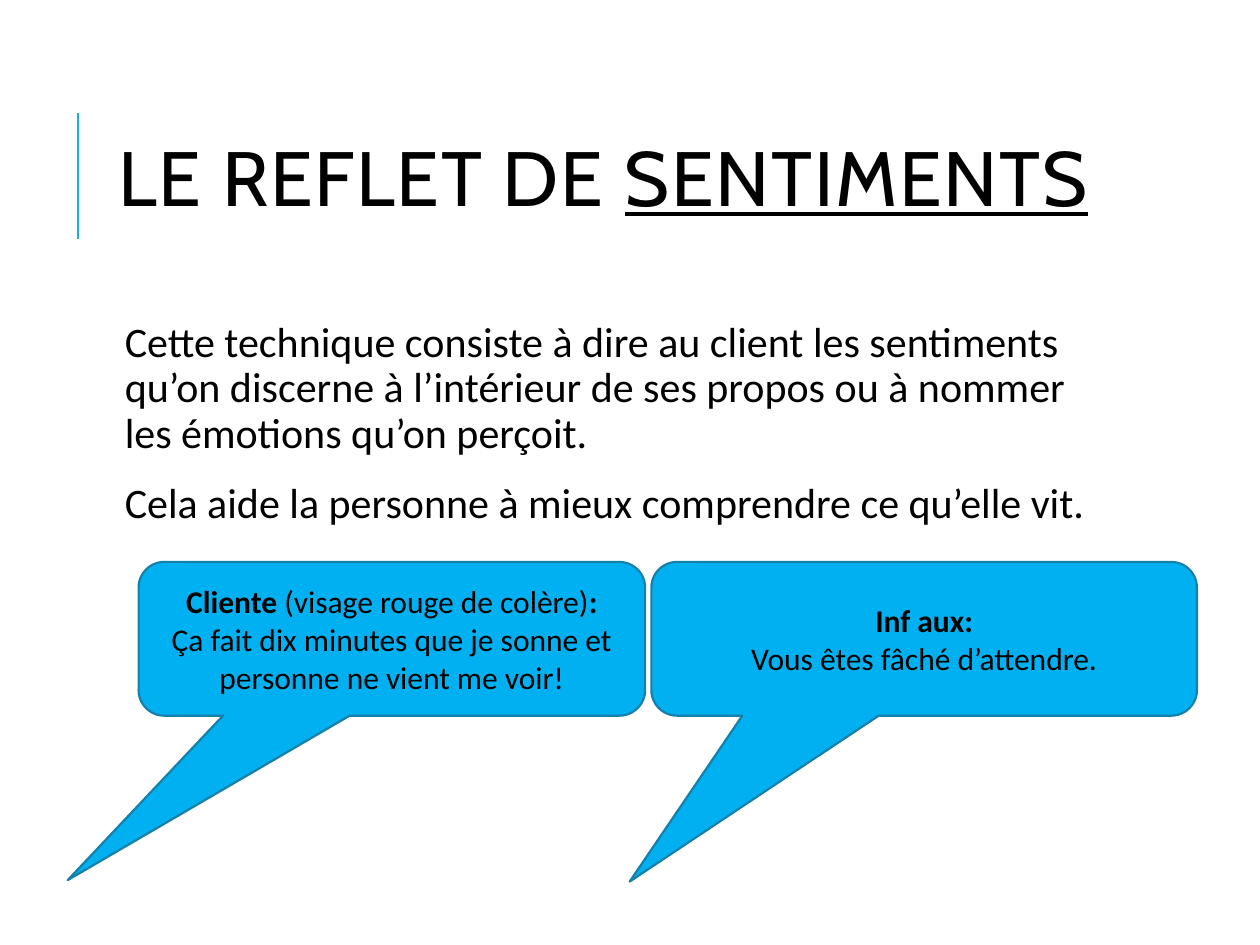
from lxml.etree import SubElement
from pptx import Presentation
from pptx.dml.color import RGBColor
from pptx.enum.shapes import MSO_CONNECTOR, MSO_SHAPE
from pptx.enum.text import MSO_ANCHOR, MSO_AUTO_SIZE, PP_ALIGN
from pptx.oxml.ns import qn
from pptx.util import Inches, Pt

BLACK = RGBColor(0x00, 0x00, 0x00)
ACCENT = RGBColor(0x1C, 0xAD, 0xE4)
CALLOUT_FILL = RGBColor(0x00, 0xB0, 0xF0)
CALLOUT_LINE = RGBColor(0x15, 0x80, 0xA9)

COLUMN_LEFT, COLUMN_WIDTH = 0.84, 7.97
CALLOUT_TOP, CALLOUT_HEIGHT = 4.46, 1.22


def add_text(paragraph, text, size=18, font="Calibri", bold=False,
             underline=False, tracking=0):
    """Append a formatted run; tracking is letter spacing in points."""
    run = paragraph.add_run()
    run.text = text
    run.font.size = Pt(size)
    run.font.name = font
    run.font.bold = bold
    run.font.underline = underline
    run.font.color.rgb = BLACK
    if tracking:
        run.font._element.set("spc", str(tracking * 100))


def place(shape, left, top, width, height):
    shape.left, shape.top = Inches(left), Inches(top)
    shape.width, shape.height = Inches(width), Inches(height)


def add_paragraphs(frame, count):
    """Return the frame's first paragraph and enough new ones to make count."""
    return [frame.paragraphs[0]] + [frame.add_paragraph() for _ in range(count - 1)]


def set_blank_bullet(paragraph):
    """Hang the text behind a blank bullet in the accent colour."""
    properties = paragraph._p.get_or_add_pPr()
    properties.set("marL", str(Inches(0.1)))
    properties.set("indent", str(-Inches(0.1)))
    bullet_colour = SubElement(properties, qn("a:buClr"))
    SubElement(bullet_colour, qn("a:srgbClr"), val=str(ACCENT))
    SubElement(properties, qn("a:buChar"), char=" ")


def add_accent_rule(slide):
    x = Inches(0.62)
    rule = slide.shapes.add_connector(
        MSO_CONNECTOR.STRAIGHT, x, Inches(1.9), x, Inches(0.9))
    rule.line.color.rgb = ACCENT
    rule.line.width = Pt(1.5)
    SubElement(rule._element.spPr, qn("a:effectLst"))


def fill_title(title, plain, underlined):
    place(title, COLUMN_LEFT, 0.64, COLUMN_WIDTH, 1.64)
    frame = title.text_frame
    frame.auto_size = MSO_AUTO_SIZE.NONE
    frame.vertical_anchor = MSO_ANCHOR.MIDDLE
    heading = frame.paragraphs[0]
    heading.alignment = PP_ALIGN.LEFT
    heading.line_spacing = 0.8
    style = dict(size=44, font="Cabin", tracking=1)
    add_text(heading, plain, **style)
    add_text(heading, underlined, underline=True, **style)


def fill_body(body, texts):
    place(body, COLUMN_LEFT, 2.5, COLUMN_WIDTH, 4.4)
    frame = body.text_frame
    frame.auto_size = MSO_AUTO_SIZE.NONE
    frame.margin_left = frame.margin_right = Inches(0.05)
    frame.margin_top = frame.margin_bottom = Inches(0.05)
    for paragraph, text in zip(add_paragraphs(frame, len(texts)), texts):
        paragraph.line_spacing = 0.9
        paragraph.space_before = Pt(12)
        paragraph.space_after = Pt(2)
        set_blank_bullet(paragraph)
        add_text(paragraph, text, size=24)


def add_callout(slide, left, width, tip, lines):
    """Draw a speech bubble; lines hold (text, bold) pairs, tip is relative."""
    bubble = slide.shapes.add_shape(
        MSO_SHAPE.ROUNDED_RECTANGULAR_CALLOUT, Inches(left), Inches(CALLOUT_TOP),
        Inches(width), Inches(CALLOUT_HEIGHT))
    bubble.adjustments[0], bubble.adjustments[1] = tip
    bubble.shadow.inherit = False
    bubble.fill.solid()
    bubble.fill.fore_color.rgb = CALLOUT_FILL
    bubble.line.color.rgb = CALLOUT_LINE
    bubble.line.width = Pt(1.25)
    frame = bubble.text_frame
    frame.word_wrap = True
    frame.vertical_anchor = MSO_ANCHOR.MIDDLE
    for paragraph, line in zip(add_paragraphs(frame, len(lines)), lines):
        paragraph.alignment = PP_ALIGN.CENTER
        for text, bold in line:
            add_text(paragraph, text, bold=bold)


def main():
    deck = Presentation()
    deck.slide_width, deck.slide_height = Inches(10), Inches(7.5)
    slide = deck.slides.add_slide(deck.slide_layouts[1])

    add_accent_rule(slide)
    fill_title(slide.shapes.title, "LE REFLET DE ", "SENTIMENTS")
    fill_body(slide.placeholders[1], [
        "Cette technique consiste à dire au client les sentiments qu’on discerne "
        "à l’intérieur de ses propos ou à nommer les émotions qu’on perçoit.",
        "Cela aide la personne à mieux comprendre ce qu’elle vit.",
    ])
    add_callout(slide, 1.1, 4.02, (-0.64, 1.57), [
        [("Cliente ", True), ("(visage rouge de colère)", False), (":", True)],
        [("Ça fait dix minutes que je sonne et personne ne vient me voir!", False)],
    ])
    add_callout(slide, 5.17, 4.33, (-0.54, 1.58), [
        [("Inf aux:", True)],
        [("Vous êtes fâché d’attendre.", False)],
    ])
    deck.save("out.pptx")


if __name__ == "__main__":
    main()
